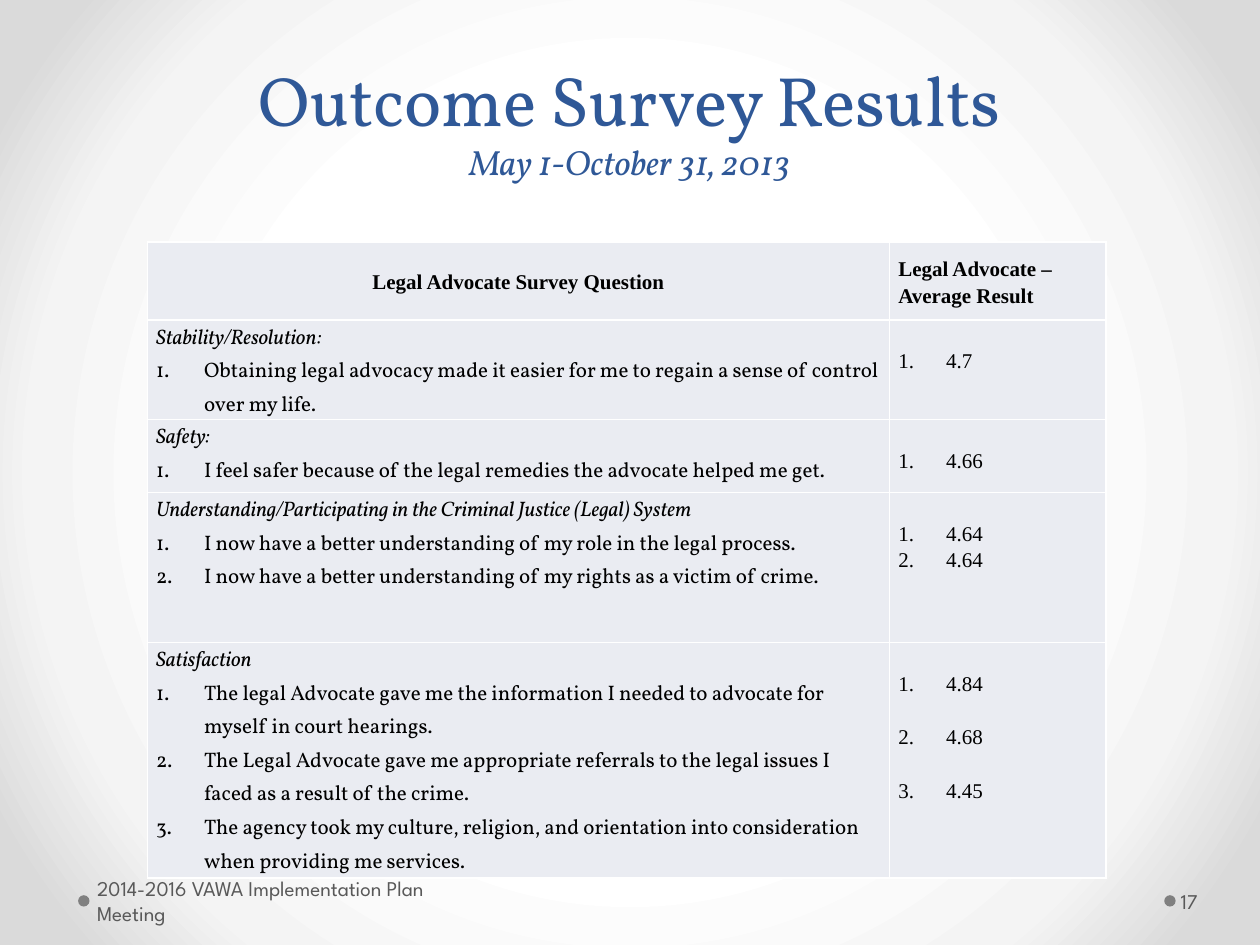
import dataclasses
import lxml.etree
import pptx
import pptx.dml.color
import pptx.enum.shapes
import pptx.enum.text
import pptx.oxml.ns
import pptx.util

Inches, Pt = pptx.util.Inches, pptx.util.Pt
Align, Anchor = pptx.enum.text.PP_ALIGN, pptx.enum.text.MSO_ANCHOR
qn = pptx.oxml.ns.qn


@dataclasses.dataclass(frozen=True)
class Theme:
    title: str = "2F5897"
    text: str = "000000"
    foot: str = "595959"
    dot: str = "808080"
    cell: str = "EAECF2"
    line: str = "FFFFFF"
    glow: tuple = ((50, "FFFFFF"), (76, "F4F4F4"), (92, "DADADA"))
    serif: str = "Vollkorn"
    roman: str = "Times New Roman"
    sans: str = "League Spartan"
    big: int = 40
    mid: int = 20
    small: int = 12


THEME = Theme()

# Each group: heading, row height, extra space between results, (question, result)
GROUPS = [
    ("Stability/Resolution:", 0.79, 0, [
        ("Obtaining legal advocacy made it easier for me to regain a sense of "
         "control over my life.", "4.7")]),
    ("Safety:", 0.58, 0, [
        ("I feel safer because of the legal remedies the advocate helped me get.",
         "4.66")]),
    ("Understanding/Participating in the Criminal Justice (Legal) System", 1.19, 0, [
        ("I now have a better understanding of my role in the legal process.", "4.64"),
        ("I now have a better understanding of my rights as a victim of crime.",
         "4.64")]),
    ("Satisfaction", 1.87, 15.4, [
        ("The legal Advocate gave me the information I needed to advocate for "
         "myself in court hearings.", "4.84"),
        ("The Legal Advocate gave me appropriate referrals to the legal issues I "
         "faced as a result of the crime.", "4.68"),
        ("The agency took my culture, religion, and orientation into consideration "
         "when providing me services.", "4.45")]),
]


def rgb(code):
    return pptx.dml.color.RGBColor.from_string(code)


def node(up, tag, **attrs):
    item = lxml.etree.SubElement(up, qn(tag))
    for name, value in attrs.items():
        item.set(name, str(value))
    return item


def add_run(para, text, font, size, color, bold=False, italic=False):
    run = para.add_run()
    run.text = text
    run.font.name, run.font.size = font, Pt(size)
    run.font.bold, run.font.italic = bold, italic
    run.font.color.rgb = rgb(color)


def set_pads(item, left, top, right, bottom):
    item.margin_left, item.margin_top = Inches(left), Inches(top)
    item.margin_right, item.margin_bottom = Inches(right), Inches(bottom)


def add_box(slide, box, anchor, pads):
    frame = slide.shapes.add_textbox(*map(Inches, box)).text_frame
    frame.word_wrap = True
    frame.vertical_anchor = anchor
    set_pads(frame, *pads)
    return frame.paragraphs[0]


def draw_back(slide):
    fill = slide.background.fill
    fill.gradient()
    grad = next(slide.element.iter(qn("a:gradFill")))
    for child in list(grad):
        grad.remove(child)
    stops = node(grad, "a:gsLst")
    for pos, color in THEME.glow:
        node(node(stops, "a:gs", pos=pos * 1000), "a:srgbClr", val=color)
    sides = dict.fromkeys("ltrb", 50000)
    node(node(grad, "a:path", path="circle"), "a:fillToRect", **sides)


def draw_title(slide, box):
    para = add_box(slide, box, Anchor.BOTTOM, (0.1, 0.05, 0.1, 0.05))
    para.alignment = Align.CENTER
    add_run(para, "Outcome Survey Results", THEME.serif, THEME.big, THEME.title)
    para.add_line_break()
    add_run(para, "May 1-October 31, 2013", THEME.serif, THEME.mid, THEME.title,
            italic=True)


def draw_foot(slide, box, text, pads):
    # Dot just left of the text, centred on its height
    left, top, _, high = box
    size = 0.09
    dot = slide.shapes.add_shape(
        pptx.enum.shapes.MSO_SHAPE.OVAL, Inches(left - size - 0.01),
        Inches(top + (high - size) / 2), Inches(size), Inches(size))
    dot.shadow.inherit = False
    dot.fill.solid()
    dot.fill.fore_color.rgb = rgb(THEME.dot)
    dot.line.fill.background()
    para = add_box(slide, box, Anchor.MIDDLE, pads)
    add_run(para, text, THEME.sans, THEME.small, THEME.foot)


def style_cell(cell, top=0):
    set_pads(cell, 0.07, top, 0.07, 0)
    props = cell._tc.get_or_add_tcPr()
    for tag in ("a:lnL", "a:lnR", "a:lnT", "a:lnB"):
        edge = node(props, tag, w=Pt(1))
        node(node(edge, "a:solidFill"), "a:srgbClr", val=THEME.line)
    cell.fill.solid()
    cell.fill.fore_color.rgb = rgb(THEME.cell)


def add_line(cell, first=False):
    frame = cell.text_frame
    para = frame.paragraphs[0] if first else frame.add_paragraph()
    para.line_spacing = 1.15
    return para


def add_list(cell, items, font, fresh, gap=0):
    for index, text in enumerate(items):
        para = add_line(cell, fresh and index == 0)
        if gap and index:
            para.space_before = Pt(gap)
        props = para._p.get_or_add_pPr()
        props.set("marL", str(Inches(0.38)))
        props.set("indent", str(-Inches(0.38)))
        node(props, "a:buFont", typeface=font)
        node(props, "a:buAutoNum", type="arabicPeriod")
        add_run(para, text, font, THEME.small, THEME.text)


def draw_table(slide, box):
    highs = [0.62] + [group[1] for group in GROUPS]
    table = slide.shapes.add_table(len(highs), 2, *map(Inches, box)).table
    table.first_row = table.horz_banding = False
    for row, high in zip(table.rows, highs):
        row.height = Inches(high)
    for col, wide in zip(table.columns, (5.89, box[2] - 5.89)):
        col.width = Inches(wide)

    # Header row
    heads = (("Legal Advocate Survey Question", Align.CENTER),
             ("Legal Advocate – Average Result", Align.LEFT))
    for cell, (text, align) in zip(table.rows[0].cells, heads):
        style_cell(cell)
        cell.vertical_anchor = Anchor.MIDDLE
        para = add_line(cell, first=True)
        para.alignment = align
        add_run(para, text, THEME.roman, THEME.small, THEME.text, bold=True)

    # Question groups, with results starting one line down
    for index, (head, _, gap, pairs) in enumerate(GROUPS, 1):
        asks, marks = zip(*pairs)
        left, right = table.cell(index, 0), table.cell(index, 1)
        style_cell(left)
        add_run(add_line(left, first=True), head, THEME.serif, THEME.small,
                THEME.text, italic=True)
        add_list(left, asks, THEME.serif, fresh=False)
        style_cell(right, top=0.21)
        add_list(right, marks, THEME.roman, fresh=True, gap=gap)


def main():
    deck = pptx.Presentation()
    deck.slide_width, deck.slide_height = Inches(10), Inches(7.5)
    slide = deck.slides.add_slide(deck.slide_layouts[6])
    draw_back(slide)
    draw_title(slide, (0.5, 0.25, 9, 1.25))
    draw_foot(slide, (0.72, 6.95, 3.11, 0.4),
              "2014-2016 VAWA Implementation Plan Meeting", (0.05, 0.05, 0.1, 0.05))
    draw_foot(slide, (9.34, 6.95, 0.61, 0.4), "17", (0.03, 0.05, 0.05, 0.05))
    draw_table(slide, (1.17, 1.92, 7.61, 5.05))
    deck.save("out.pptx")


if __name__ == "__main__":
    main()
